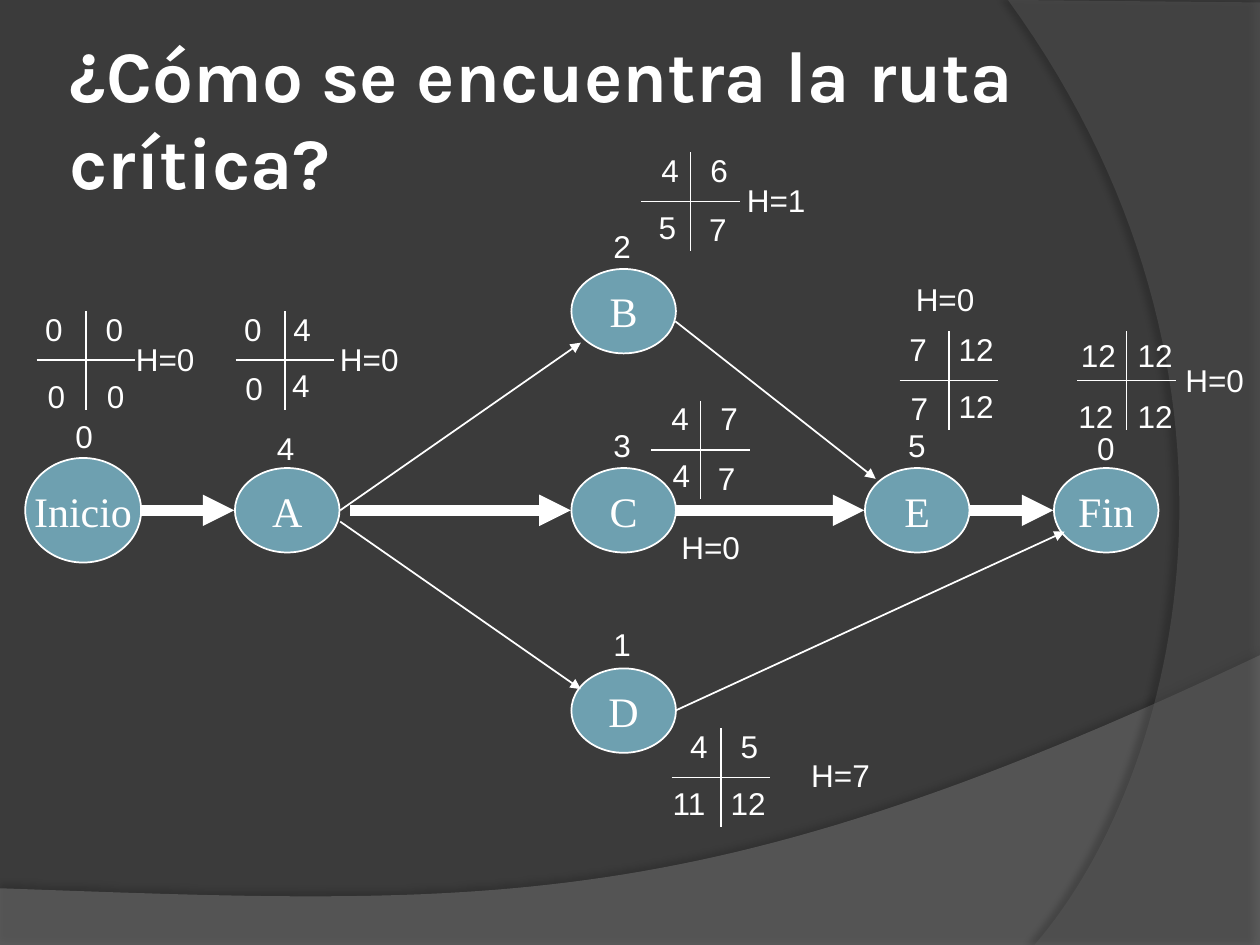
import pptx
import pptx.util
import pptx.dml.color
import pptx.enum.shapes
import pptx.enum.text
import pptx.oxml
import pptx.oxml.ns

Inches, Pt = pptx.util.Inches, pptx.util.Pt
RGBColor = pptx.dml.color.RGBColor

WHITE = RGBColor(0xFF, 0xFF, 0xFF)
BACKGROUND = RGBColor(0x3B, 0x3B, 0x3B)
NODE_FILL = RGBColor(0x6E, 0xA0, 0xB0)
LOWER_WAVE = RGBColor(0x7F, 0x7F, 0x7F)
RIGHT_WAVE = RGBColor(0x5E, 0x5E, 0x5E)

TITLE = "¿Cómo se encuentra la ruta crítica?"
ARM = 0.39          # half length of a cross
TEXT_HEIGHT = 0.4
TEXT_WIDTHS = {1: 0.34, 2: 0.48, 3: 0.67}   # by number of characters
NODE_SIZE = (0.83, 0.67)
MIDDLE = 4.05       # height of the critical path

# Activities: name, centre, size, duration, left and top of the duration
NODES = [
    ("Inicio", (0.66, MIDDLE), (0.92, 0.83), "0", (0.5, 3.26)),
    ("A", (2.28, MIDDLE), NODE_SIZE, "4", (2.1, 3.36)),
    ("B", (4.95, 2.47), NODE_SIZE, "2", (4.77, 1.75)),
    ("C", (4.95, MIDDLE), NODE_SIZE, "3", (4.77, 3.33)),
    ("D", (4.95, 5.64), NODE_SIZE, "1", (4.77, 4.91)),
    ("E", (7.28, MIDDLE), NODE_SIZE, "5", (7.11, 3.33)),
    ("Fin", (8.78, MIDDLE), NODE_SIZE, "0", (8.61, 3.36)),
]

# Arrows: the critical path is thick and level
CRITICAL_STEPS = [(1.11, 1.86), (2.78, 4.53), (5.36, 6.86), (7.7, 8.36)]
OTHER_STEPS = [
    ((2.7, 4.05), (4.61, 2.72)),
    ((2.7, 4.14), (4.61, 5.47)),
    ((5.36, 2.55), (6.95, 3.8)),
    ((5.36, 5.64), (8.45, 4.22)),
]

# Crosses: centre, four (time, left, top) by rows, slack (text, left, top)
CROSSES = [
    ((0.68, 2.86), [("0", 0.26, 2.41), ("0", 0.74, 2.41),
                    ("0", 0.28, 2.94), ("0", 0.75, 2.94)], ("H=0", 0.98, 2.65)),
    ((2.26, 2.86), [("0", 1.84, 2.41), ("4", 2.23, 2.41),
                    ("0", 1.85, 2.88), ("4", 2.22, 2.86)], ("H=0", 2.6, 2.65)),
    ((5.48, 1.6), [("4", 5.15, 1.15), ("6", 5.54, 1.15),
                   ("5", 5.13, 1.6), ("7", 5.53, 1.62)], ("H=1", 5.83, 1.39)),
    ((5.56, 3.57), [("4", 5.23, 3.12), ("7", 5.62, 3.12),
                    ("4", 5.24, 3.57), ("7", 5.6, 3.59)], ("H=0", 5.31, 4.14)),
    ((5.72, 6.17), [("4", 5.38, 5.72), ("5", 5.78, 5.72),
                    ("11", 5.24, 6.17), ("12", 5.7, 6.17)], ("H=7", 6.34, 5.95)),
    ((7.53, 3.02), [("7", 7.12, 2.57), ("12", 7.51, 2.57),
                    ("7", 7.13, 3.04), ("12", 7.51, 3.02)], ("H=0", 7.17, 2.17)),
    ((8.94, 3.02), [("12", 8.48, 2.62), ("12", 8.93, 2.62),
                    ("12", 8.46, 3.1), ("12", 8.93, 3.1)], ("H=0", 9.31, 2.82)),
]

# Waves: straight corners, Bézier points, colour, opacity, then shadow
# opacity, distance in points and direction in degrees
WAVES = [
    ([(0, 7.05), (0, 7.51), (10, 7.51)],
     [(10, 5.2), (5.59, 7.29), (3.91, 7.19), (0, 7.05)], LOWER_WAVE, 45, 35, 3.5, 270),
    ([(10, 0.02), (10, 7.5)],
     [(8.21, 7.5), (9.35, 6.19), (10.18, 3), (8, 0)], RIGHT_WAVE, 40, 45, 4, 180),
]


def curve_points(controls, steps=60):
    weights = (1, 3, 3, 1)
    for step in range(steps + 1):
        t = step / steps
        yield tuple(sum(weight * (1 - t) ** (3 - i) * t ** i * point[axis]
                        for i, (weight, point) in enumerate(zip(weights, controls)))
                    for axis in (0, 1))


def add_wave(slide, corners, controls, color, opacity, shade, distance, direction):
    points = [(Inches(x), Inches(y)) for x, y in corners + list(curve_points(controls))]
    builder = slide.shapes.build_freeform(*points[0])
    builder.add_line_segments(points[1:], close=True)
    shape = builder.convert_to_shape()
    shape.fill.solid()
    shape.fill.fore_color.rgb = color
    shape.line.fill.background()
    fill_color = shape._element.spPr.find(".//" + pptx.oxml.ns.qn("a:srgbClr"))
    alpha = pptx.oxml.parse_xml(
        f'<a:alpha {pptx.oxml.ns.nsdecls("a")} val="{opacity * 1000}"/>')
    fill_color.append(alpha)
    shape._element.spPr.append(pptx.oxml.parse_xml(
        f'<a:effectLst {pptx.oxml.ns.nsdecls("a")}>'
        f'<a:outerShdw blurRad="{Pt(4)}" dist="{Pt(distance)}" dir="{direction * 60000}" '
        f'algn="ctr" rotWithShape="0"><a:srgbClr val="000000">'
        f'<a:alpha val="{shade * 1000}"/></a:srgbClr></a:outerShdw></a:effectLst>'))


def write(shape, text, font_name, size, wrap=False, bold=False):
    frame = shape.text_frame
    frame.text = text
    frame.word_wrap = wrap
    font = frame.paragraphs[0].runs[0].font
    font.name, font.size, font.bold = font_name, Pt(size), bold
    font.color.rgb = WHITE
    return frame


def add_label(slide, text, left, top):
    box = slide.shapes.add_textbox(Inches(left), Inches(top),
                                   Inches(TEXT_WIDTHS[len(text)]), Inches(TEXT_HEIGHT))
    write(box, text, "Arial", 18)


def add_node(slide, name, center, size):
    left, top = (middle - length / 2 for middle, length in zip(center, size))
    shape = slide.shapes.add_shape(pptx.enum.shapes.MSO_SHAPE.OVAL, Inches(left),
                                   Inches(top), Inches(size[0]), Inches(size[1]))
    shape.shadow.inherit = False
    shape.fill.solid()
    shape.fill.fore_color.rgb = NODE_FILL
    shape.line.color.rgb = WHITE
    shape.line.width = Pt(1)
    frame = write(shape, name, "Times New Roman", 24)
    frame.vertical_anchor = pptx.enum.text.MSO_ANCHOR.MIDDLE
    frame.paragraphs[0].alignment = pptx.enum.text.PP_ALIGN.CENTER


def add_line(slide, start, end, width=1, arrow=False):
    line = slide.shapes.add_connector(pptx.enum.shapes.MSO_CONNECTOR.STRAIGHT,
                                      *(Inches(value) for value in start + end))
    line.line.color.rgb = WHITE
    line.line.width = Pt(width)
    namespace = pptx.oxml.ns.nsdecls("a")
    if arrow:
        line.line._get_or_add_ln().append(
            pptx.oxml.parse_xml(f'<a:tailEnd {namespace} type="triangle"/>'))
    line._element.spPr.append(pptx.oxml.parse_xml(f'<a:effectLst {namespace}/>'))


def main():
    presentation = pptx.Presentation()
    presentation.slide_width, presentation.slide_height = Inches(10), Inches(7.5)
    slide = presentation.slides.add_slide(presentation.slide_layouts[6])

    # Background and title
    slide.background.fill.solid()
    slide.background.fill.fore_color.rgb = BACKGROUND
    for wave in WAVES:
        add_wave(slide, *wave)
    title = slide.shapes.add_textbox(Inches(0.5), Inches(0.3), Inches(8.17), Inches(1.25))
    frame = write(title, TITLE, "Karla", 41.4, wrap=True, bold=True)
    frame.vertical_anchor = pptx.enum.text.MSO_ANCHOR.MIDDLE
    frame.margin_left = frame.margin_right = Inches(0.05)

    # Activities with their durations
    for name, center, size, duration, place in NODES:
        add_node(slide, name, center, size)
        add_label(slide, duration, *place)

    # Arrows
    for start, end in CRITICAL_STEPS:
        add_line(slide, (start, MIDDLE), (end, MIDDLE), 6, arrow=True)
    for start, end in OTHER_STEPS:
        add_line(slide, start, end, arrow=True)

    # Crosses with start and finish times, and slack
    for (x, y), times, slack in CROSSES:
        add_line(slide, (x, y - ARM), (x, y + ARM))
        add_line(slide, (x - ARM, y), (x + ARM, y))
        for label in times + [slack]:
            add_label(slide, *label)

    presentation.save("out.pptx")


if __name__ == "__main__":
    main()
